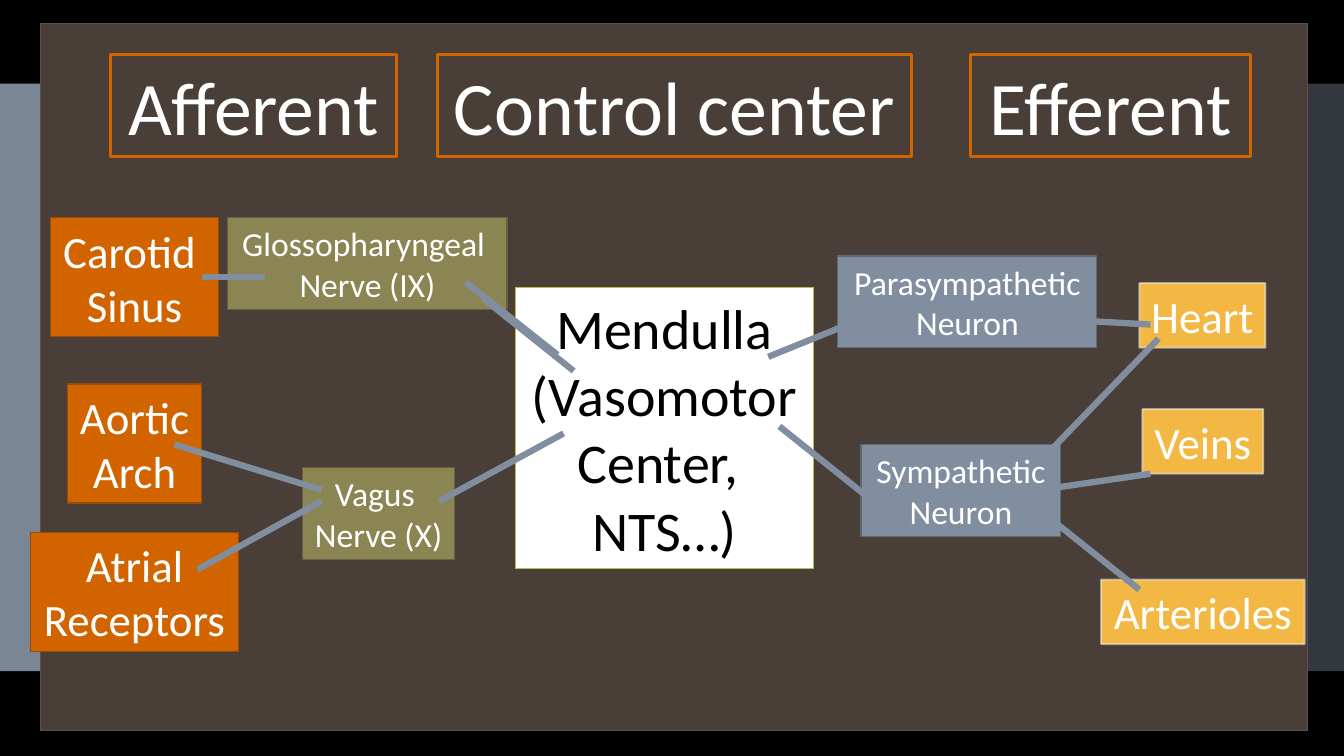
"""Build the baroreflex slide: afferent, control center and efferent pathways."""
from lxml import etree
from pptx import Presentation
from pptx.dml.color import RGBColor
from pptx.enum.shapes import MSO_CONNECTOR, MSO_SHAPE
from pptx.enum.text import MSO_ANCHOR, MSO_AUTO_SIZE, PP_ALIGN
from pptx.oxml.ns import qn
from pptx.util import Inches, Pt

RECTANGLE = MSO_SHAPE.RECTANGLE
STRAIGHT = MSO_CONNECTOR.STRAIGHT
CENTER = PP_ALIGN.CENTER
FRAME_FORMAT = {
    "word_wrap": False,
    "auto_size": MSO_AUTO_SIZE.SHAPE_TO_FIT_TEXT,
    "vertical_anchor": MSO_ANCHOR.MIDDLE,
}
THEME = {
    "font": "Calibri",
    "background": "000000",
    "pathway": {"line": "818E9F", "width": 4.5},
    "left band": {"fill": "818E9F", "fill_alpha": 95},
    "right band": {"fill": "818E9F", "fill_alpha": 40},
    "panel": {"fill": "4A3F38", "line": "595054", "width": 0.85},
    "heading": {"line": "D26400", "width": 2.25, "size": 54, "text": "FFFFFF"},
    "receptor": {"fill": "D26400", "line": "9B4A00", "width": 0.85, "size": 32, "text": "FFFFFF"},
    "nerve": {"fill": "8A8552", "line": "66623D", "width": 0.85, "size": 24, "text": "FFFFFF"},
    "center": {"fill": "FFFFFF", "line": "C3BA45", "width": 0.85, "size": 40, "text": "000000"},
    "neuron": {"fill": "818E9F", "line": "5F6976", "width": 0.85, "size": 24, "text": "FFFFFF"},
    "effector": {"fill": "F3B843", "line": "F9F9F9", "line_alpha": 50, "width": 1.35,
                 "size": 32, "text": "FFFFFF"},
}


def paint(fill, color, alpha=None):
    """Apply a solid colour, or no fill, with an optional opacity percentage."""
    if color is None:
        fill.background()
        return
    fill.solid()
    fill.fore_color.rgb = RGBColor.from_string(color)
    if alpha is not None:
        color_element = fill._xPr.find(qn("a:solidFill"))[0]
        etree.SubElement(color_element, qn("a:alpha"), val=str(alpha * 1000))


def add_block(slide, role, left, top, width, height, label=""):
    """Add a rectangle styled by its role, one paragraph per label line."""
    style = THEME[role]
    block = slide.shapes.add_shape(
        RECTANGLE, Inches(left), Inches(top), Inches(width), Inches(height))
    block.shadow.inherit = False
    paint(block.fill, style.get("fill"), style.get("fill_alpha"))
    paint(block.line.fill, style.get("line"), style.get("line_alpha"))
    if "line" in style:
        block.line.width = Pt(style["width"])
    if not label:
        return
    frame = block.text_frame
    for attribute, value in FRAME_FORMAT.items():
        setattr(frame, attribute, value)
    frame.text = label
    font_format = {"name": THEME["font"], "size": Pt(style["size"])}
    for paragraph in frame.paragraphs:
        paragraph.alignment = CENTER
        for run in paragraph.runs:
            for attribute, value in font_format.items():
                setattr(run.font, attribute, value)
            run.font.color.rgb = RGBColor.from_string(style["text"])


presentation = Presentation()
presentation.slide_width = Inches(13.33)
presentation.slide_height = Inches(7.5)
slide = presentation.slides.add_slide(presentation.slide_layouts[6])
paint(slide.background.fill, THEME["background"])

add_block(slide, "left band", 0, 0.83, 3.77, 5.83)
add_block(slide, "right band", 12.92, 0.83, 0.41, 5.83)
add_block(slide, "panel", 0.4, 0.23, 12.57, 7.02)

headings = [("Afferent", 1.1, 2.83), ("Control center", 4.34, 4.7), ("Efferent", 9.63, 2.77)]
for label, left, width in headings:
    add_block(slide, "heading", left, 0.54, width, 1.01, label)

stations = {
    "receptor": (1.18, [
        ("Carotid \nSinus", 0.5, 2.16, 1.67),
        ("Aortic\nArch", 0.67, 3.81, 1.33),
        ("Atrial\nReceptors", 0.3, 5.28, 2.07),
    ]),
    "nerve": (0.91, [
        ("Glossopharyngeal \nNerve (IX)", 2.26, 2.16, 2.77),
        ("Vagus \nNerve (X)", 3, 4.64, 1.51),
    ]),
    "center": (2.79, [("Mendulla\n(Vasomotor\nCenter, \nNTS…)", 5.11, 2.85, 2.96)]),
    "neuron": (0.91, [
        ("Sympathetic\nNeuron", 8.54, 4.41, 1.98),
        ("Parasympathetic\nNeuron", 8.31, 2.54, 2.57),
    ]),
    "effector": (0.64, [
        ("Heart", 11.3, 2.81, 1.25),
        ("Veins", 11.33, 4.06, 1.2),
        ("Arterioles", 10.92, 5.75, 2.02),
    ]),
}
for role, (height, members) in stations.items():
    for label, left, top, width in members:
        add_block(slide, role, left, top, width, height, label)

pathways = [
    (2, 2.75, 2.63, 2.75),
    (1.73, 4.41, 3.19, 4.86),
    (1.96, 5.65, 3.19, 4.97),
    (4.36, 4.97, 5.59, 4.3),
    (4.62, 2.8, 5.53, 3.52),
    (4.79, 2.96, 5.69, 3.68),
    (7.73, 4.23, 8.63, 4.95),
    (7.62, 3.54, 8.63, 3.13),
    (10.4, 5.13, 11.3, 5.85),
    (10.32, 4.86, 11.41, 4.7),
    (10.38, 4.51, 11.49, 3.36),
    (10.35, 3.16, 11.41, 3.22),
]
for ends in pathways:
    pathway = slide.shapes.add_connector(STRAIGHT, *map(Inches, ends))
    paint(pathway.line.fill, THEME["pathway"]["line"])
    pathway.line.width = Pt(THEME["pathway"]["width"])
    etree.SubElement(pathway._element.spPr, qn("a:effectLst"))

presentation.save("out.pptx")
